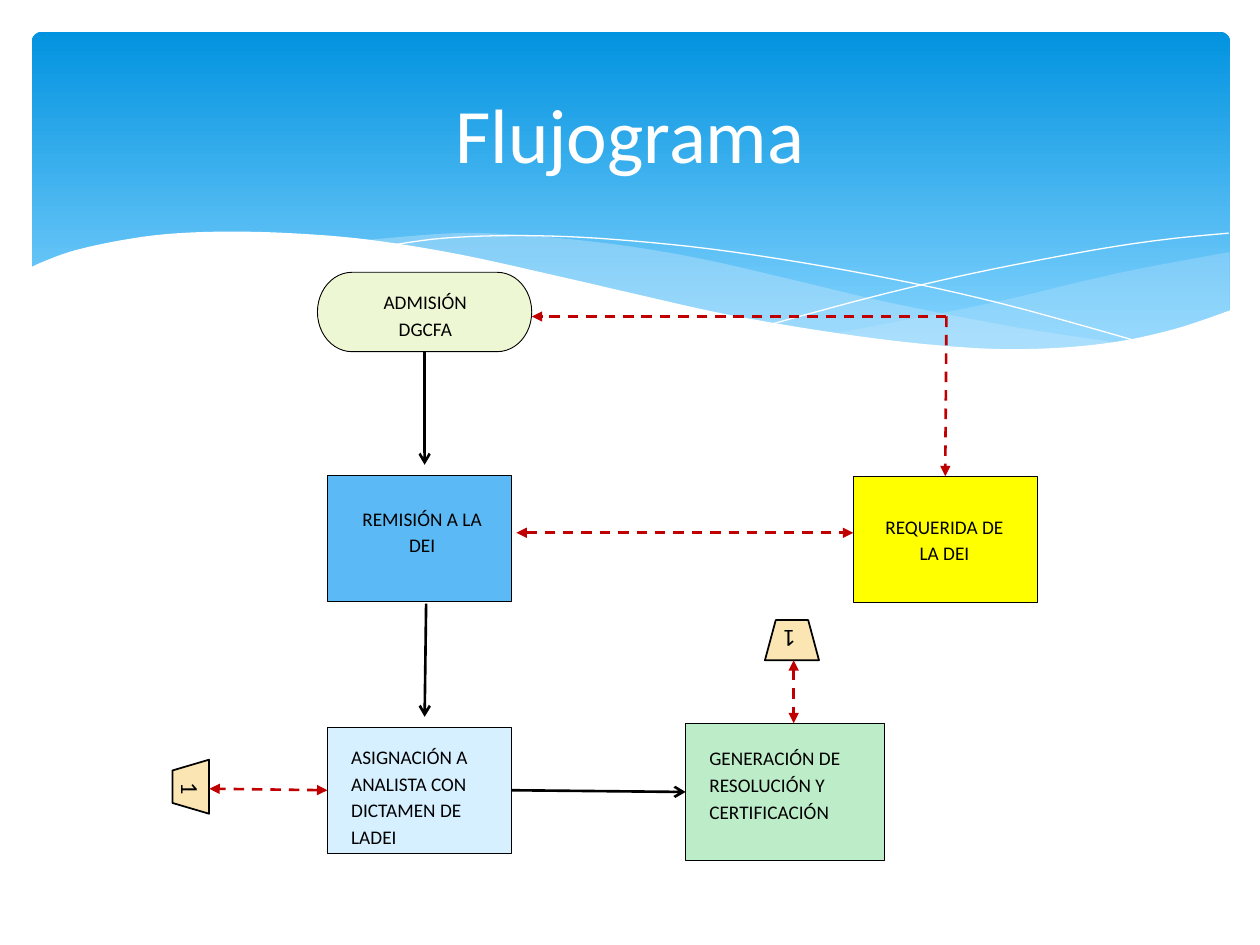
from dataclasses import dataclass
from typing import Optional

import pptx
import pptx.dml.color
import pptx.enum.dml
import pptx.enum.shapes
import pptx.enum.text
import pptx.oxml.ns
import pptx.oxml.xmlchemy
import pptx.util
from lxml import etree

Cm, Pt = pptx.util.Cm, pptx.util.Pt
Kind = pptx.enum.shapes.MSO_SHAPE
Align = pptx.enum.text.PP_ALIGN
Anchor = pptx.enum.text.MSO_ANCHOR
qn = pptx.oxml.ns.qn
FONT, BLACK, WHITE, RED, SAND, MIST = "Calibri", "000000", "FFFFFF", "C00000", "FBE6B3", "C6E7FC"
Frame = tuple[float, float, float, float]
Point = tuple[float, float]


@dataclass
class Step:
    kind: Kind
    frame: Frame
    fill: str
    text: str
    text_frame: Frame
    align: Align = Align.CENTER


@dataclass
class Marker:
    frame: Frame
    rotation: int


@dataclass
class Link:
    start: Point
    end: Point
    color: str = BLACK
    head: Optional[str] = None
    tail: str = "arrow"
    begin_at: Optional[tuple[str, int]] = None
    end_at: Optional[tuple[str, int]] = None


@dataclass
class Wave:
    curves: list[list[Point]]
    fill: Optional[str] = None
    opacity: int = 100


STEPS = {
    "admission": Step(Kind.FLOWCHART_TERMINATOR, (6.4, 5.49, 4.32, 1.6), "EDF7D3",
                      "ADMISIÓN DGCFA", (7.19, 5.66, 2.77, 1.32)),
    "referral": Step(Kind.RECTANGLE, (6.6, 9.58, 3.71, 2.54), "5BBAF6",
                     "REMISIÓN A LA DEI", (6.91, 10.03, 3.2, 1.85)),
    "request": Step(Kind.RECTANGLE, (17.2, 9.6, 3.71, 2.54), "FFFF00",
                    "REQUERIDA DE LA DEI", (17.48, 10.19, 3.12, 1.32)),
    "assignment": Step(Kind.RECTANGLE, (6.6, 14.66, 3.71, 2.54), "D6F0FF",
                       "ASIGNACIÓN A ANALISTA CON DICTAMEN DE LADEI",
                       (6.83, 14.83, 3.63, 2.01), Align.LEFT),
    "resolution": Step(Kind.RECTANGLE, (13.82, 14.58, 4.01, 2.77), "BDECC9",
                       "GENERACIÓN DE RESOLUCIÓN Y CERTIFICACIÓN",
                       (14.05, 14.86, 3.56, 2.44), Align.LEFT),
}
MARKERS = [Marker((15.42, 12.5, 1.09, 0.81), 180), Marker((3.3, 15.49, 1.09, 0.74), 90)]
LINKS = [
    Link((8.56, 7.09), (8.56, 9.37), begin_at=("admission", 2)),
    Link((8.59, 12.17), (8.56, 14.45)),
    Link((10.31, 15.93), (13.82, 15.96), begin_at=("assignment", 3), end_at=("resolution", 1)),
    Link((16, 13.31), (16, 14.58), RED, "triangle", "triangle"),
    Link((10.41, 10.74), (17.2, 10.74), RED, "triangle", "triangle"),
    Link((19.08, 6.38), (19.06, 9.6), RED, None, "triangle", end_at=("request", 0)),
    Link((19.08, 6.38), (10.72, 6.38), RED, None, "triangle"),
    Link((6.6, 15.93), (4.22, 15.9), RED, "triangle", "triangle", begin_at=("assignment", 1)),
]
WAVES = [
    Wave([[(24.79, 5.08), (23.01, 5.41), (21.87, 5.66), (19.79, 6.15), (16.79, 6.73)],
          [(16.79, 6.73), (18.92, 6.99), (20.93, 7.06), (22.58, 6.91), (23.75, 6.65),
           (24.79, 6.27)]], MIST, 29),
    Wave([[(22.68, 6.93), (20.5, 6.6), (17.93, 6.1), (15.98, 5.64), (14.1, 5.21),
           (12.42, 4.93), (10.67, 4.75), (9.17, 4.7), (7.26, 4.85)],
          [(7.26, 4.85), (9.19, 5.16), (11.4, 5.64), (14.38, 6.3), (16.89, 6.76),
           (19, 6.99), (20.78, 7.06), (22.68, 6.93)]], MIST, 40),
    Wave([[(7.85, 4.95), (8.97, 4.8), (10.57, 4.75), (12.42, 4.83), (14.78, 5.08),
           (17.65, 5.56), (20.19, 6.12), (23.04, 6.91)]]),
    Wave([[(15.57, 6.53), (17.65, 5.97), (19.71, 5.49), (22, 5.05), (23.47, 4.83),
           (24.77, 4.7)]]),
    Wave([[(24.82, 6.25), (23.62, 6.65), (22.23, 6.93), (20.55, 7.04), (18.9, 6.96),
           (16.97, 6.73), (14.71, 6.35), (12.78, 5.92), (11.35, 5.59), (9.27, 5.13),
           (7.42, 4.83), (5.84, 4.7), (4.49, 4.67), (3.35, 4.72), (2.41, 4.85),
           (1.5, 5.05), (0.91, 5.26), (0.58, 5.41)],
          [(0.58, 8.36), (24.82, 8.36)]], WHITE),
]


def rgb(value: str) -> pptx.dml.color.RGBColor:
    return pptx.dml.color.RGBColor.from_string(value)


def lengths(values) -> list[int]:
    return [Cm(value) for value in values]


def smooth(knots: list[Point], steps: int = 6) -> list[Point]:
    padded = [knots[0], *knots, knots[-1]]
    points = [knots[0]]
    for a, b, c, d in zip(padded, padded[1:], padded[2:], padded[3:]):
        for t in (step / steps for step in range(1, steps + 1)):
            points.append(tuple(
                q + t / 2 * (r - p + t * (2 * p - 5 * q + 4 * r - s + t * (3 * (q - r) + s - p)))
                for p, q, r, s in zip(a, b, c, d)))
    return points


def paint(shape, fill: str, line_width: float = 0) -> None:
    shape.shadow.inherit = False
    shape.fill.solid()
    shape.fill.fore_color.rgb = rgb(fill)
    if line_width:
        shape.line.color.rgb = rgb(BLACK)
        shape.line.width = Pt(line_width)
    else:
        shape.line.fill.background()


def write(box, text: str, size: float, color: str, align: Align = Align.CENTER):
    box.text_frame.word_wrap = True
    box.text_frame.text = text
    para = box.text_frame.paragraphs[0]
    para.alignment = align
    span = para.runs[0]
    span.font.name, span.font.size = FONT, Pt(size)
    span.font.color.rgb = rgb(color)
    return para


def draw_header(page) -> None:
    band = page.shapes.add_shape(Kind.ROUNDED_RECTANGLE, *lengths((0.64, 0.64, 24.16, 6.86)))
    band.adjustments[0] = 0.03
    paint(band, WHITE)
    band.fill.gradient()
    band.fill.gradient_angle = 270
    for stop, place, color in zip(band.fill.gradient_stops, (0, 0.9), ("0293E0", "83D3FE")):
        stop.position = place
        stop.color.rgb = rgb(color)


def draw_wave(page, wave: Wave) -> None:
    points = [lengths(point) for curve in wave.curves for point in smooth(curve)]
    builder = page.shapes.build_freeform(*points[0])
    builder.add_line_segments(points[1:], close=wave.fill is not None)
    shape = builder.convert_to_shape()
    paint(shape, wave.fill or WHITE)
    if wave.fill is None:
        shape.fill.background()
        shape.line.color.rgb = rgb(WHITE)
        shape.line.width = Pt(0)
    elif wave.opacity < 100:
        color = shape._element.spPr.find(qn("a:solidFill")).find(qn("a:srgbClr"))
        etree.SubElement(color, qn("a:alpha"), val=str(wave.opacity * 1000))


def draw_step(page, step: Step):
    shape = page.shapes.add_shape(step.kind, *lengths(step.frame))
    paint(shape, step.fill, 0.5)
    box = page.shapes.add_textbox(*lengths(step.text_frame))
    para = write(box, step.text, 11, BLACK, step.align)
    para.line_spacing, para.space_after = 1.15, Pt(10)
    return shape


def draw_marker(page, marker: Marker) -> None:
    shape = page.shapes.add_shape(Kind.FLOWCHART_MANUAL_OPERATION, *lengths(marker.frame))
    shape.rotation = marker.rotation
    paint(shape, SAND, 1)
    write(shape, "1", 14, BLACK)
    shape.text_frame.vertical_anchor = Anchor.MIDDLE


def draw_link(page, link: Link, shapes: dict) -> None:
    line = page.shapes.add_connector(pptx.enum.shapes.MSO_CONNECTOR.STRAIGHT,
                                     *lengths(link.start + link.end))
    if link.begin_at:
        line.begin_connect(shapes[link.begin_at[0]], link.begin_at[1])
    if link.end_at:
        line.end_connect(shapes[link.end_at[0]], link.end_at[1])
    line.line.color.rgb = rgb(link.color)
    line.line.width = Pt(1.5)
    if link.color == RED:
        line.line.dash_style = pptx.enum.dml.MSO_LINE.DASH
    outline = line.line._get_or_add_ln()
    for tag, arrow in (("a:headEnd", link.head), ("a:tailEnd", link.tail)):
        if arrow:
            etree.SubElement(outline, qn(tag), type=arrow)
    etree.SubElement(line._element.spPr, qn("a:effectLst"))


def main() -> None:
    """Build the flowchart slide and save it."""
    deck = pptx.Presentation()
    deck.slide_width, deck.slide_height = Cm(25.4), Cm(19.05)
    page = deck.slides.add_slide(deck.slide_layouts[6])
    draw_header(page)
    for wave in WAVES:
        draw_wave(page, wave)
    title = page.shapes.add_textbox(*lengths((1.27, 0.94, 22.86, 3.48)))
    write(title, "Flujograma", 44, WHITE)
    title.text_frame.vertical_anchor = Anchor.MIDDLE
    shapes = {name: draw_step(page, step) for name, step in STEPS.items()}
    for marker in MARKERS:
        draw_marker(page, marker)
    for link in LINKS:
        draw_link(page, link, shapes)
    deck.save("out.pptx")


if __name__ == "__main__":
    main()
